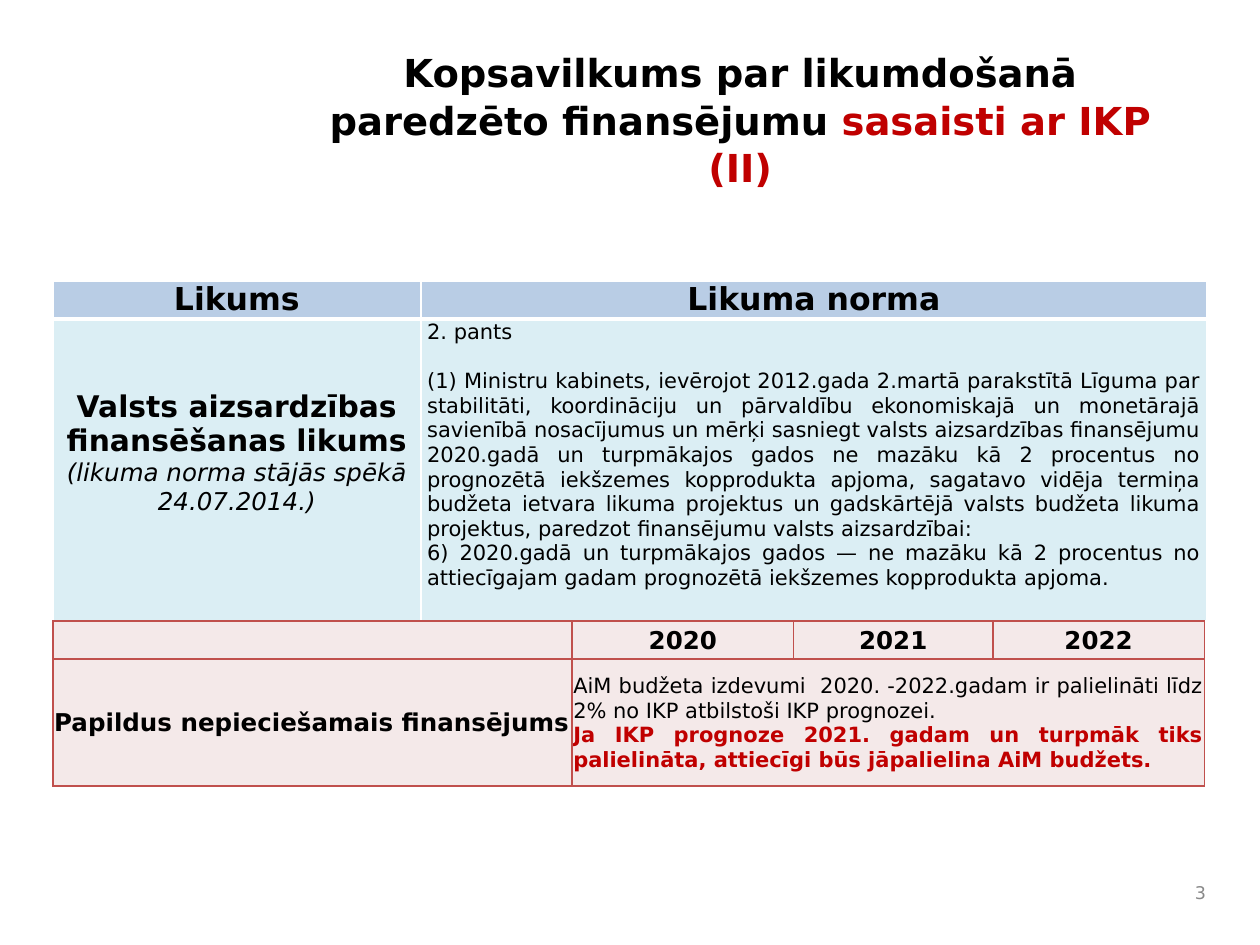
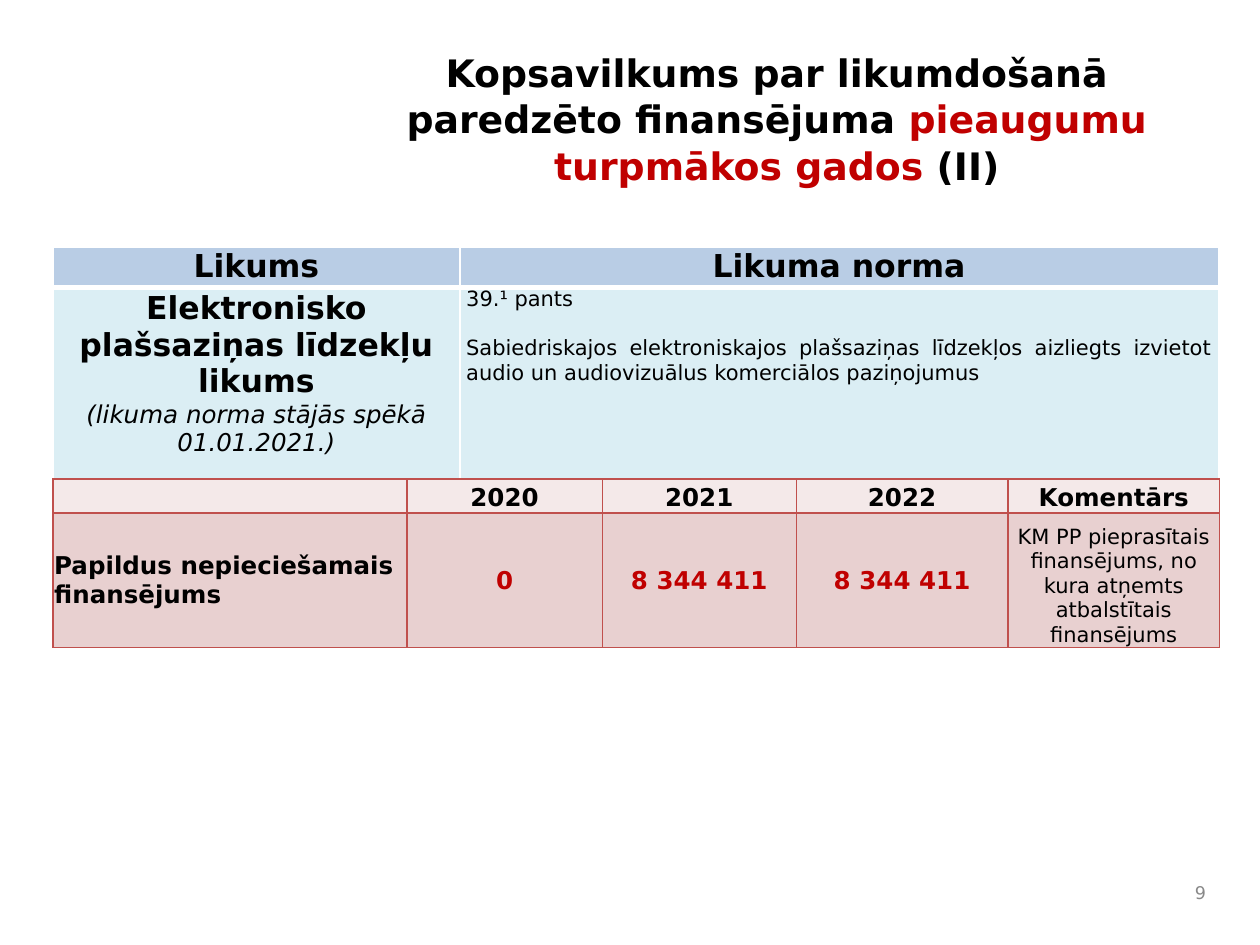
import pptx
import pptx.dml.color
import pptx.enum.text
import pptx.util
from lxml import etree
from pptx.oxml.ns import qn

Inches, Pt = pptx.util.Inches, pptx.util.Pt
ALIGN = pptx.enum.text.PP_ALIGN
ANCHOR = pptx.enum.text.MSO_ANCHOR
FONT = "DejaVu Sans"
COLOURS = {
    "black": "000000", "red": "C00000", "grey": "898989", "white": "FFFFFF",
    "header": "B9CDE5", "law": "DBEEF4", "border": "C0504D",
    "cost": "F4E9E9", "cost_dark": "E8D0D0",
}
LEFT = 0.42
LINE_GAP = 14
LAW_INSETS = (0.05, 0, 0.05, 0)
COST_INSETS = (0.01, 0.01, 0.01, 0)
WHITE_EDGES = ("white", {"L": 1, "R": 1, "T": 1, "B": 3})
RED_EDGES = ("border", {"L": 1, "R": 1, "T": 1, "B": 1})


def write(frame, paragraphs):
    """Fill a frame from (alignment, space before, spans); a span is (text, size, style, colour)."""
    for index, (align, gap, spans) in enumerate(paragraphs):
        para = frame.paragraphs[0] if index == 0 else frame.add_paragraph()
        para.alignment = align
        para.space_before = Pt(gap)
        for text, size, style, colour in spans:
            span = para.add_run()
            span.text = text
            span.font.name = FONT
            span.font.size = Pt(size)
            span.font.bold = style == "bold"
            span.font.italic = style == "italic"
            span.font.color.rgb = pptx.dml.color.RGBColor.from_string(COLOURS[colour])


def add_grid(page, top, columns, rows, edges, insets, cells):
    """Add a table whose cells are rows of (fill, anchor, paragraphs)."""
    grid = page.shapes.add_table(len(rows), len(columns), Inches(LEFT), Inches(top),
                                 Inches(sum(columns)), Inches(sum(rows))).table
    grid.first_row = grid.horz_banding = False
    for column, width in zip(grid.columns, columns):
        column.width = Inches(width)
    for row, height in zip(grid.rows, rows):
        row.height = Inches(height)
    edge_colour, edge_widths = edges
    for r, row_cells in enumerate(cells):
        for c, (fill, anchor, paragraphs) in enumerate(row_cells):
            cell = grid.cell(r, c)
            (cell.margin_left, cell.margin_top,
             cell.margin_right, cell.margin_bottom) = map(Inches, insets)
            cell.vertical_anchor = anchor
            cell.fill.solid()
            cell.fill.fore_color.rgb = pptx.dml.color.RGBColor.from_string(COLOURS[fill])
            properties = cell._tc.get_or_add_tcPr()
            for position, (side, width) in enumerate(edge_widths.items()):
                line = etree.Element(qn(f"a:ln{side}"), w=str(Pt(width)))
                solid = etree.SubElement(line, qn("a:solidFill"))
                etree.SubElement(solid, qn("a:srgbClr"), val=COLOURS[edge_colour])
                properties.insert(position, line)
            if paragraphs:
                write(cell.text_frame, paragraphs)
            else:
                etree.SubElement(cell.text_frame.paragraphs[0]._p,
                                 qn("a:endParaRPr"), sz="1200")
    return grid


deck = pptx.Presentation()
deck.slide_width, deck.slide_height = Inches(10), Inches(7.5)

pages = [
    {
        "number": "3",
        "title_left": 2.25,
        "title": [("Kopsavilkums par likumdošanā paredzēto finansējumu ", 22, "bold", "black"),
                  ("sasaisti ar IKP (II)", 22, "bold", "red")],
        "columns": (2.92, 6.24),
        "header": (2.23, 0.3),
        "body": (2.54, 2.4),
        "law": ("Valsts aizsardzības finansēšanas likums", 17),
        "in_force": "(likuma norma stājās spēkā 24.07.2014.)",
        "norm": [
            "2. pants",
            "(1) Ministru kabinets, ievērojot 2012.gada 2.martā parakstītā Līguma par "
            "stabilitāti, koordināciju un pārvaldību ekonomiskajā un monetārajā savienībā "
            "nosacījumus un mērķi sasniegt valsts aizsardzības finansējumu 2020.gadā un "
            "turpmākajos gados ne mazāku kā 2 procentus no prognozētā iekšzemes "
            "kopprodukta apjoma, sagatavo vidēja termiņa budžeta ietvara likuma projektus "
            "un gadskārtējā valsts budžeta likuma projektus, paredzot finansējumu valsts "
            "aizsardzībai:",
            "6) 2020.gadā un turpmākajos gados — ne mazāku kā 2 procentus no attiecīgajam "
            "gadam prognozētā iekšzemes kopprodukta apjoma.",
        ],
        "cost_top": 4.93,
        "cost_columns": (4.12, 1.76, 1.58, 1.68),
        "cost_rows": (0.3, 1.01),
        "cost_heads": ("2020", "2021", "2022"),
        "head_anchor": ANCHOR.MIDDLE,
        "cost_fill": "cost",
        "costs": [
            (ANCHOR.MIDDLE, [
                (ALIGN.JUSTIFY, 0, [("AiM budžeta izdevumi  2020. -2022.gadam ir palielināti līdz "
                                     "2% no IKP atbilstoši IKP prognozei.", 12, "", "black")]),
                (ALIGN.JUSTIFY, 0, [("Ja IKP prognoze 2021. gadam un turpmāk tiks palielināta, "
                                     "attiecīgi būs jāpalielina AiM budžets.", 12, "bold", "red")]),
            ]),
            (ANCHOR.MIDDLE, []),
            (ANCHOR.MIDDLE, []),
        ],
        "merge_costs": True,
    },
    {
        "number": "9",
        "title_left": 2.83,
        "title": [("Kopsavilkums par likumdošanā paredzēto finansējuma ", 21.6, "bold", "black"),
                  ("pieaugumu turpmākos gados ", 21.6, "bold", "red"),
                  ("(II)", 21.6, "bold", "black")],
        "columns": (3.23, 6.02),
        "header": (1.96, 0.32),
        "body": (2.28, 1.67),
        "law": ("Elektronisko plašsaziņas līdzekļu likums", 18),
        "in_force": "(likuma norma stājās spēkā 01.01.2021.)",
        "norm": [
            "39.¹ pants",
            "Sabiedriskajos elektroniskajos plašsaziņas līdzekļos aizliegts izvietot audio un "
            "audiovizuālus komerciālos paziņojumus",
        ],
        "cost_top": 3.8,
        "cost_columns": (2.81, 1.55, 1.54, 1.68, 1.68),
        "cost_rows": (0.27, 1.07),
        "cost_heads": ("2020", "2021", "2022", "Komentārs"),
        "head_anchor": ANCHOR.BOTTOM,
        "cost_fill": "cost_dark",
        "costs": [
            (ANCHOR.MIDDLE, [(ALIGN.CENTER, 0, [(amount, 14, "bold", "red")])])
            for amount in ("0", "8 344 411", "8 344 411")
        ] + [
            (ANCHOR.BOTTOM, [(ALIGN.CENTER, 0, [("KM PP pieprasītais finansējums, no kura atņemts "
                                                 "atbalstītais finansējums", 12, "", "black")])]),
        ],
        "merge_costs": False,
    },
]

for content in pages:
    page = deck.slides.add_slide(deck.slide_layouts[5])
    title = page.shapes.title
    title.left, title.top = Inches(content["title_left"]), Inches(0.33)
    title.width, title.height = Inches(9.5 - content["title_left"]), Inches(1.17)
    title.text_frame.auto_size = pptx.enum.text.MSO_AUTO_SIZE.NONE
    title.text_frame.vertical_anchor = ANCHOR.TOP
    write(title.text_frame, [(ALIGN.CENTER, 0, content["title"])])
    title.text_frame.paragraphs[0].line_spacing = 1.03

    number_box = page.shapes.add_textbox(Inches(9.21), Inches(6.92), Inches(0.46), Inches(0.33))
    number_box.text_frame.word_wrap = True
    number_box.text_frame.vertical_anchor = ANCHOR.MIDDLE
    write(number_box.text_frame, [(ALIGN.RIGHT, 0, [(content["number"], 10, "", "grey")])])

    law_name, law_size = content["law"]
    law = [(ALIGN.CENTER, 0, [(law_name, law_size, "bold", "black")]),
           (ALIGN.CENTER, 0, [(content["in_force"], 14, "italic", "black")])]
    norm = [(ALIGN.LEFT if index == 0 else ALIGN.JUSTIFY, LINE_GAP if index == 1 else 0,
             [(text, 12, "", "black")]) for index, text in enumerate(content["norm"])]
    body_top, body_height = content["body"]
    body = add_grid(page, body_top, content["columns"], [body_height], WHITE_EDGES, LAW_INSETS,
                    [[("law", ANCHOR.MIDDLE, law), ("law", ANCHOR.TOP, norm)]])
    body.cell(0, 0).margin_bottom = Inches(0.29)

    header_top, header_height = content["header"]
    add_grid(page, header_top, content["columns"], [header_height], WHITE_EDGES, LAW_INSETS,
             [[("header", ANCHOR.MIDDLE, [(ALIGN.CENTER, 0, [(text, 18, "bold", "black")])])
               for text in ("Likums", "Likuma norma")]])

    heads = [("cost", ANCHOR.MIDDLE, [])] + [
        ("cost", content["head_anchor"], [(ALIGN.CENTER, 0, [(text, 14, "bold", "black")])])
        for text in content["cost_heads"]]
    needed = [(ALIGN.LEFT, 0, [("Papildus nepieciešamais finansējums", 14, "bold", "black")])]
    costs = [(content["cost_fill"], anchor, paragraphs)
             for anchor, paragraphs in [(ANCHOR.MIDDLE, needed)] + content["costs"]]
    cost_grid = add_grid(page, content["cost_top"], content["cost_columns"],
                         content["cost_rows"], RED_EDGES, COST_INSETS, [heads, costs])
    if content["merge_costs"]:
        cost_grid.cell(1, 1).merge(cost_grid.cell(1, 3))

deck.save("out.pptx")
